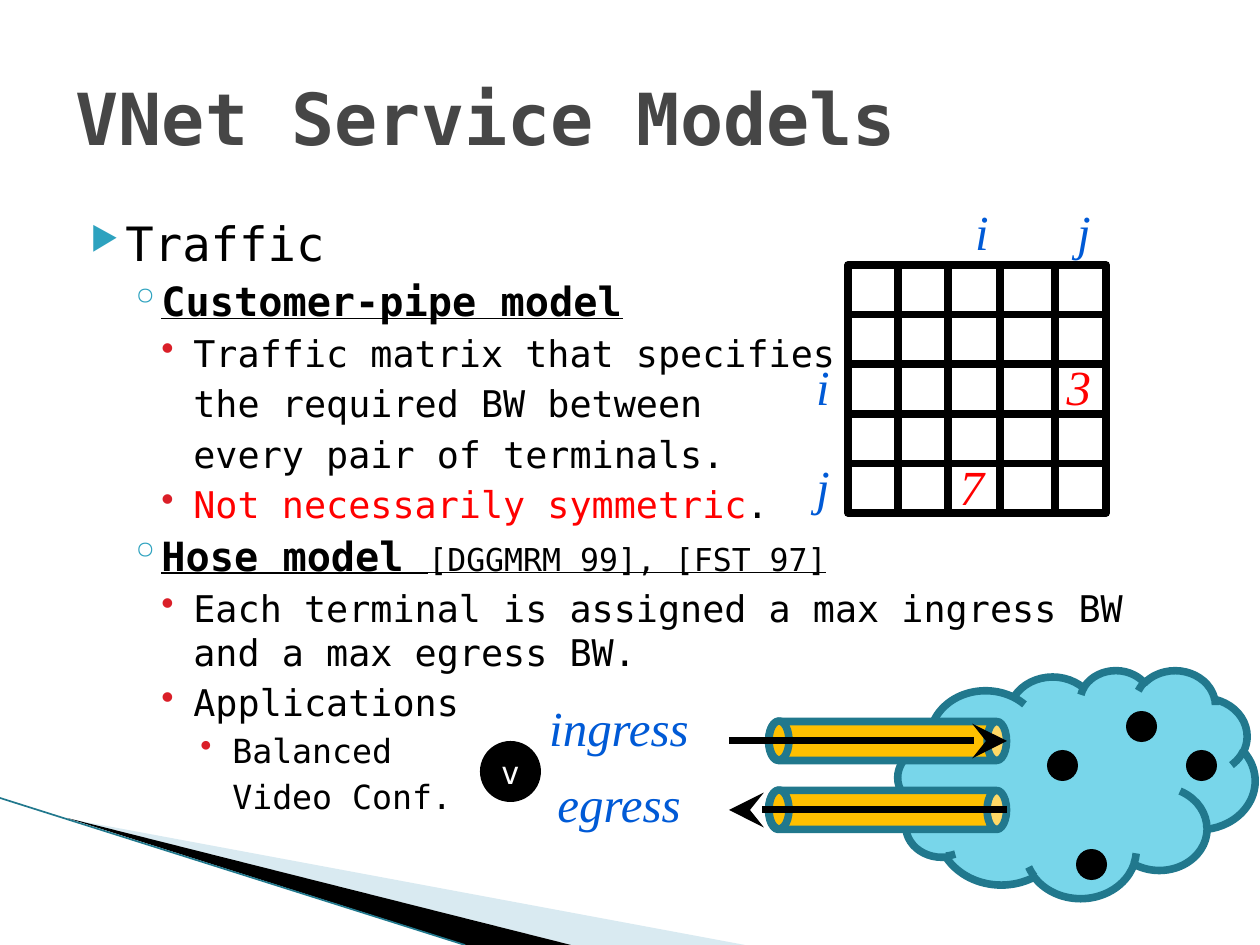
from dataclasses import dataclass

from lxml.etree import SubElement
from pptx import Presentation
from pptx.dml.color import RGBColor
from pptx.enum.shapes import MSO_CONNECTOR, MSO_SHAPE
from pptx.enum.text import MSO_ANCHOR, PP_ALIGN
from pptx.oxml.ns import qn
from pptx.util import Emu, Pt

PX = 914400 / 126


@dataclass(frozen=True)
class Theme:
    """Colours, fonts, type sizes and line widths of the slide."""
    mono: str = "DejaVu Sans Mono"
    serif: str = "Times New Roman"
    black: str = "000000"
    white: str = "FFFFFF"
    title: str = "464646"
    red: str = "FF0000"
    blue: str = "005AD6"
    teal: str = "21788D"
    cloud: str = "78D6EA"
    pipe: str = "FFC000"
    wedge: str = "D9EAF1"
    accent: str = "2DA2BF"
    bullet: str = "DA1F28"
    title_size: int = 41
    label_size: int = 28
    node_size: int = 18
    cite_size: int = 18
    outline: float = 4.33
    arrow: float = 4
    hairline: float = 0.95


@dataclass(frozen=True)
class Level:
    """Type size, indents in px and bullet of one outline level."""
    size: int
    margin: int
    hang: int
    before: float
    mark: str
    colour: str
    scale: int = 100


THEME = Theme()
LEVELS = (
    Level(27, 50, 35, 4, "▶", THEME.accent, 68),
    Level(23, 86, 32, 3.2, "◦", THEME.accent),
    Level(21, 118, 32, 3.5, "•", THEME.bullet),
    Level(19, 157, 32, 3.5, "•", THEME.bullet),
)
HEADING = {"bold": True, "underline": True}
OUTLINE = (
    (0, True, [("Traffic", {})]),
    (1, True, [("Customer-pipe model", HEADING)]),
    (2, True, [("Traffic matrix that specifies", {})]),
    (2, False, [("the required BW between", {})]),
    (2, False, [("every pair of terminals.", {})]),
    (2, True, [("Not necessarily symmetric", {"colour": THEME.red}), (".", {})]),
    (1, True, [("Hose model", HEADING), (" ", {"underline": True}),
               ("[DGGMRM 99], [FST 97]", {"underline": True, "size": THEME.cite_size})]),
    (2, True, [("Each terminal is assigned a max ingress BW and a max egress BW.", {})]),
    (2, True, [("Applications", {})]),
    (3, True, [("Balanced", {})]),
    (3, False, [("Video Conf.", {})]),
)


def px(*values):
    """Turn pixel lengths into EMU."""
    return [Emu(round(value * PX)) for value in values]


def style_font(font, size, colour, name=THEME.mono, bold=False, italic=False, underline=False):
    """Set every property of a font."""
    font.name, font.size = name, Pt(size)
    font.bold, font.italic, font.underline = bold, italic, underline
    font.color.rgb = RGBColor.from_string(colour)


def paint(shape, fill=None, line=None):
    """Set the fill and outline of a shape, or remove them."""
    shape.shadow.inherit = False
    if fill:
        shape.fill.solid()
        shape.fill.fore_color.rgb = RGBColor.from_string(fill)
    else:
        shape.fill.background()
    if line:
        shape.line.color.rgb = RGBColor.from_string(line)
        shape.line.width = Pt(THEME.outline)
    else:
        shape.line.fill.background()


def add_figure(page, kind, frame, fill=None, line=None):
    """Add a preset shape at a pixel frame."""
    shape = page.shapes.add_shape(kind, *px(*frame))
    paint(shape, fill, line)
    return shape


def add_line(page, start, end, width, colour=THEME.black, arrow=False):
    """Add a straight line, with an arrowhead at its end if asked."""
    line = page.shapes.add_connector(MSO_CONNECTOR.STRAIGHT, *px(*start, *end))
    line.line.color.rgb = RGBColor.from_string(colour)
    line.line.width = Pt(width)
    if arrow:
        SubElement(line.line._get_or_add_ln(), qn("a:tailEnd"), type="stealth", w="lg", len="lg")
    SubElement(line._element.spPr, qn("a:effectLst"))


def add_wedge(page, points, fill):
    """Add a filled polygon through pixel points."""
    builder = page.shapes.build_freeform(*points[0], scale=PX)
    builder.add_line_segments(points[1:], close=True)
    paint(builder.convert_to_shape(), fill)


def write_centred(shape, text):
    """Put one centred line of text in a shape and return its font."""
    frame = shape.text_frame
    frame.word_wrap = True
    frame.margin_left = frame.margin_right = 0
    frame.text = text
    frame.paragraphs[0].alignment = PP_ALIGN.CENTER
    return frame.paragraphs[0].runs[0].font


def add_label(page, text, left, top, width=48, colour=THEME.blue):
    """Add an italic label."""
    box = page.shapes.add_textbox(*px(left, top, width, 72))
    style_font(write_centred(box, text), THEME.label_size, colour, THEME.serif, italic=True)


def add_bullet(para, level, marked):
    """Indent a paragraph and give it its level's bullet."""
    margin, hang = px(level.margin, level.hang)
    properties = para._p.get_or_add_pPr()
    properties.set("marL", str(margin))
    properties.set("indent", str(-hang if marked else 0))
    if marked:
        colour = SubElement(properties, qn("a:buClr"))
        SubElement(colour, qn("a:srgbClr"), val=level.colour)
        SubElement(properties, qn("a:buSzPct"), val=str(level.scale * 1000))
        SubElement(properties, qn("a:buChar"), char=level.mark)


def add_outline(page):
    """Add the bulleted text."""
    frame = page.shapes.add_textbox(*px(63, 208, 1134, 620)).text_frame
    frame.word_wrap = True
    for index, (depth, marked, spans) in enumerate(OUTLINE):
        level = LEVELS[depth]
        para = frame.add_paragraph() if index else frame.paragraphs[0]
        add_bullet(para, level, marked)
        if index:
            para.space_before = Pt(level.before)
        for text, options in spans:
            span = para.add_run()
            span.text = text
            style_font(span.font, **{"size": level.size, "colour": THEME.black, **options})


def add_title(page, text):
    """Place and format the title placeholder."""
    title = page.shapes.title
    title.left, title.top, title.width, title.height = px(63, 38, 1134, 158)
    title.text_frame.text = text
    title.text_frame.vertical_anchor = MSO_ANCHOR.MIDDLE
    para = title.text_frame.paragraphs[0]
    para.alignment = PP_ALIGN.LEFT
    style_font(para.runs[0].font, THEME.title_size, THEME.title, bold=True)


def add_matrix(page, left=848, top=265, width=258, height=248, rows=5):
    """Add the traffic matrix with its row, column and cell labels."""
    add_figure(page, MSO_SHAPE.RECTANGLE, (left, top, width, height), line=THEME.black)
    for row in range(1, rows):
        y = top + height * row / rows
        add_line(page, (left, y), (left + width, y), THEME.outline)
    for x in (898, 948, 1000, 1055):
        add_line(page, (x, top), (x, top + height), THEME.outline)
    for text, column, row in (("i", 958, 350), ("j", 1060, 450)):
        add_label(page, text, column, 195)
        add_label(page, text, 799, row)
    add_label(page, "3", 1055, 350, colour=THEME.red)
    add_label(page, "7", 948, 450, colour=THEME.red)


def add_pipe(page, middle, start, end):
    """Add a horizontal pipe with an arrow running through it."""
    can = add_figure(page, MSO_SHAPE.CAN, (868, middle - 119, 39, 238), THEME.pipe, THEME.teal)
    can.rotation = 90
    can.adjustments[0] = 0.5
    add_figure(page, MSO_SHAPE.OVAL, (769, middle - 20, 20, 39), THEME.pipe, THEME.teal)
    add_line(page, (start, middle), (end, middle), THEME.arrow, arrow=True)


def add_hose(page):
    """Add the network cloud, its two pipes and its terminals."""
    add_figure(page, MSO_SHAPE.CLOUD, (898, 670, 357, 228), THEME.cloud, THEME.teal)
    add_pipe(page, 741, 729, 1007)
    add_pipe(page, 810, 1007, 729)
    add_label(page, "ingress", 520, 691, 198)
    add_label(page, "egress", 520, 767, 198)
    node = add_figure(page, MSO_SHAPE.OVAL, (480, 741, 61, 61), THEME.black)
    node.text_frame.vertical_anchor = MSO_ANCHOR.MIDDLE
    style_font(write_centred(node, "v"), THEME.node_size, THEME.white)
    for left, top in ((1126, 711), (1047, 750), (1076, 849), (1186, 750)):
        add_figure(page, MSO_SHAPE.OVAL, (left, top, 31, 31), THEME.black)


def main():
    """Build the slide and save it."""
    deck = Presentation()
    deck.slide_width, deck.slide_height = px(1260, 945)
    page = deck.slides.add_slide(deck.slide_layouts[5])
    add_wedge(page, [(69, 819), (745, 945), (571, 945)], THEME.wedge)
    add_wedge(page, [(67, 818), (571, 945), (466, 945)], THEME.black)
    add_line(page, (0, 798), (465, 945), THEME.hairline, THEME.teal)
    add_outline(page)
    add_title(page, "VNet Service Models")
    add_matrix(page)
    add_hose(page)
    deck.save("out.pptx")


if __name__ == "__main__":
    main()
